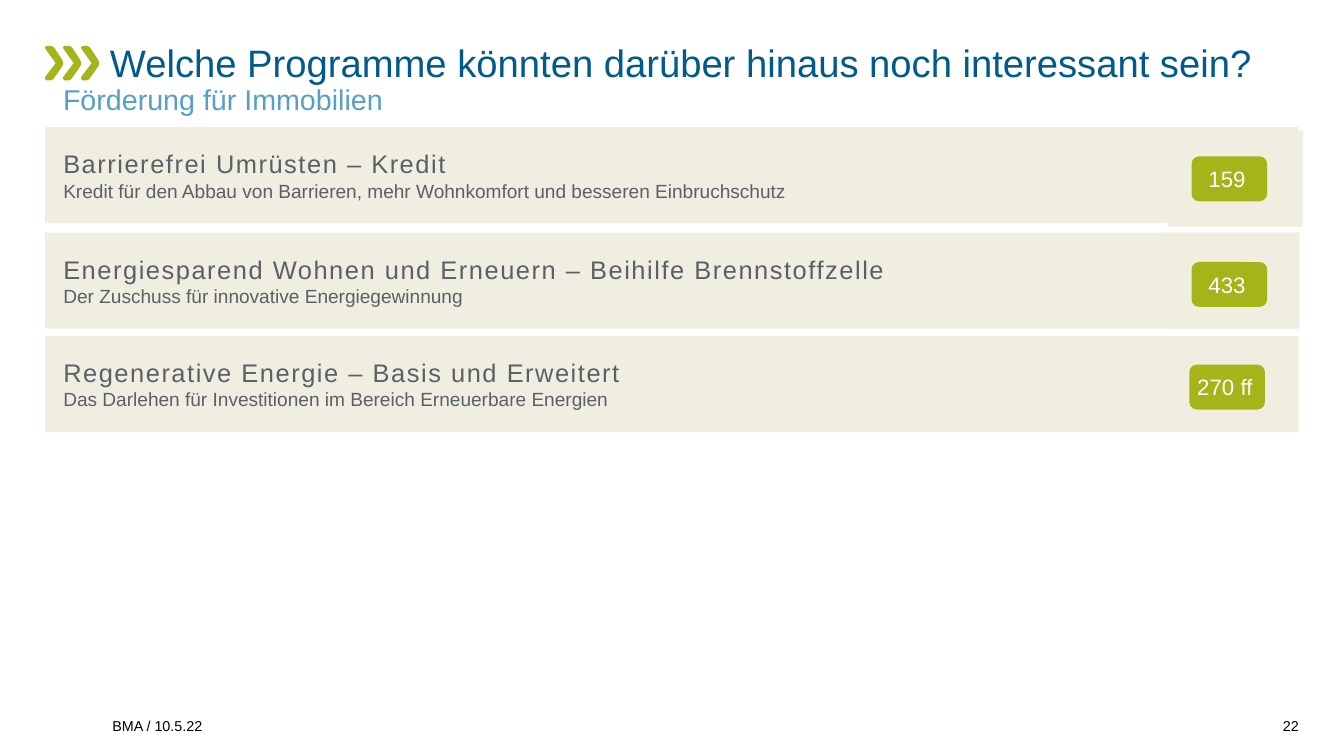
from dataclasses import dataclass

from pptx import Presentation
from pptx import util as u
from pptx.dml.color import RGBColor
from pptx.enum import shapes, text


@dataclass(frozen=True)
class Theme:
    font: str = "Arial"
    title: str = "005A8C"
    subtitle: str = "55A0C6"
    panel: str = "F0EEE1"
    accent: str = "A4B419"
    body: str = "5A6166"
    white: str = "FFFFFF"
    black: str = "000000"
    title_size: float = 24
    subtitle_size: float = 18
    heading_size: float = 16
    badge_size: float = 14
    detail_size: float = 12
    footer_size: float = 9


class Slide:
    def __init__(self, page, theme):
        self.page = page
        self.theme = theme

    def paint(self, shape, color):
        shape.shadow.inherit = False
        shape.fill.solid()
        shape.fill.fore_color.rgb = RGBColor.from_string(color)
        shape.line.fill.background()

    def frame(self, shape, anchor, insets=(0, 0, 0, 0)):
        frame = shape.text_frame
        frame.word_wrap = True
        frame.vertical_anchor = anchor
        (frame.margin_left, frame.margin_top,
         frame.margin_right, frame.margin_bottom) = map(u.Pt, insets)
        return frame

    def style(self, para, size, color, align=text.PP_ALIGN.LEFT):
        para.alignment = align
        for span in para.runs:
            span.font.name = self.theme.font
            span.font.size = u.Pt(size)
            span.font.color.rgb = RGBColor.from_string(color)

    def label(self, place, words, size, color, anchor=text.MSO_ANCHOR.TOP,
              align=text.PP_ALIGN.LEFT):
        box = self.page.shapes.add_textbox(*map(u.Pt, place))
        frame = self.frame(box, anchor)
        frame.text = words
        para = frame.paragraphs[0]
        self.style(para, size, color, align)
        return para

    def panel(self, place, kind=shapes.MSO_SHAPE.RECTANGLE, color=None):
        shape = self.page.shapes.add_shape(kind, *map(u.Pt, place))
        self.paint(shape, color or self.theme.panel)
        return shape

    def program(self, place, heading, detail):
        frame = self.frame(self.panel(place), text.MSO_ANCHOR.MIDDLE, (11.5, 8.6, 11.5, 8.6))
        frame.text = f"{heading}\n{detail}"
        first, second = frame.paragraphs
        self.style(first, self.theme.heading_size, self.theme.body)
        self.style(second, self.theme.detail_size, self.theme.body)
        first.runs[0].font._element.set("spc", "100")

    def badge(self, place, number):
        shape = self.panel(place, shapes.MSO_SHAPE.ROUNDED_RECTANGLE, self.theme.accent)
        frame = self.frame(shape, text.MSO_ANCHOR.MIDDLE, (0, 8.6, 2.9, 8.6))
        frame.text = number
        self.style(frame.paragraphs[0], self.theme.badge_size, self.theme.white,
                   text.PP_ALIGN.CENTER)

    def chevron(self, left, top):
        outline = [(1.4, 0), (0.3, 0.4), (0, 1.2), (0.6, 2.2), (6.7, 10.8),
                   (0.2, 19.4), (0, 20.6), (0.9, 21.6), (3.8, 21.6), (5.2, 20.9),
                   (10.9, 12.8), (11.5, 10.8), (10.9, 8.8), (5.5, 0.7), (4, 0)]
        points = [(u.Pt(left + x), u.Pt(top + y)) for x, y in outline]
        builder = self.page.shapes.build_freeform(*points[0])
        builder.add_line_segments(points[1:], close=True)
        self.paint(builder.convert_to_shape(), self.theme.accent)


def main():
    deck = Presentation()
    deck.slide_width, deck.slide_height = u.Pt(844.56), u.Pt(475.2)
    theme = Theme()
    slide = Slide(deck.slides.add_slide(deck.slide_layouts[6]), theme)

    # Header
    for index in range(3):
        slide.chevron(28.3 + index * 11.3, 28.9)
    subtitle = slide.label((39.6, 53.3, 777, 26), "Förderung für Immobilien",
                           theme.subtitle_size, theme.subtitle)
    title = slide.label((39.6, 26.6, 777, 29.5),
                        "Welche Programme könnten darüber hinaus noch interessant sein?",
                        theme.title_size, theme.title)
    subtitle.line_spacing = title.line_spacing = 0.95
    title._p.get_or_add_pPr().set("indent", str(u.Pt(29.5)))

    # Programs: top, heading, detail, end panel position, badge position, number
    programs = [
        (79.9, "Barrierefrei Umrüsten – Kredit",
         "Kredit für den Abbau von Barrieren, mehr Wohnkomfort und besseren Einbruchschutz",
         (733.7, 82.1), (748.8, 98.3), "159"),
        (146.2, "Energiesparend Wohnen und Erneuern – Beihilfe Brennstoffzelle",
         "Der Zuschuss für innovative Energiegewinnung",
         (731.5, 146.2), (748.8, 164.7), "433"),
        (211.2, "Regenerative Energie – Basis und Erweitert",
         "Das Darlehen für Investitionen im Bereich Erneuerbare Energien",
         None, (747.4, 229.2), "270 ff"),
    ]
    for top, heading, detail, end, badge, number in programs:
        slide.program((28.3, top, 787.7, 60.4), heading, detail)
        if end:
            slide.panel((*end, 85, 60.4))
        slide.badge((*badge, 47.5, 28.2), number)

    # Footer
    bottom = text.MSO_ANCHOR.BOTTOM
    slide.label((70.6, 441.4, 712.8, 20.2), "BMA / 10.5.22",
                theme.footer_size, theme.black, bottom)
    slide.label((787, 441.4, 29.2, 20.2), "22",
                theme.footer_size, theme.black, bottom, text.PP_ALIGN.RIGHT)

    deck.save("out.pptx")


if __name__ == "__main__":
    main()
